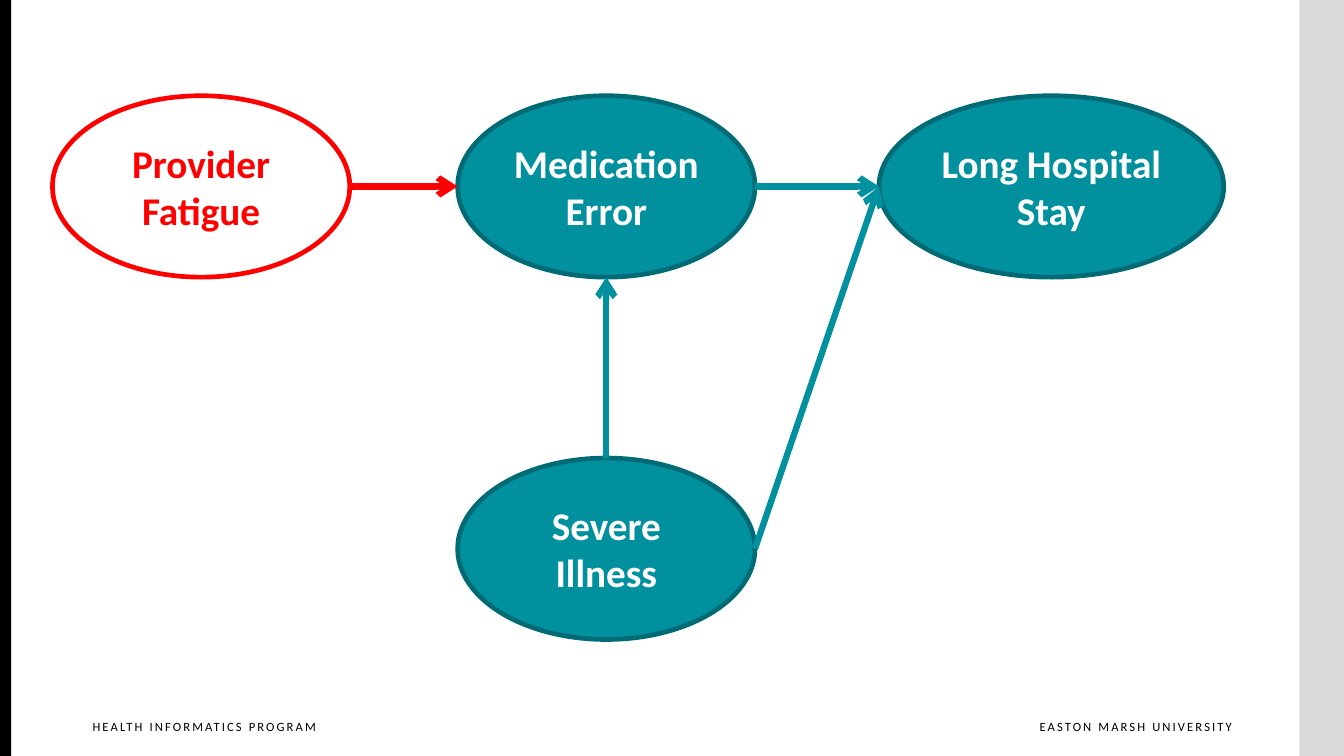
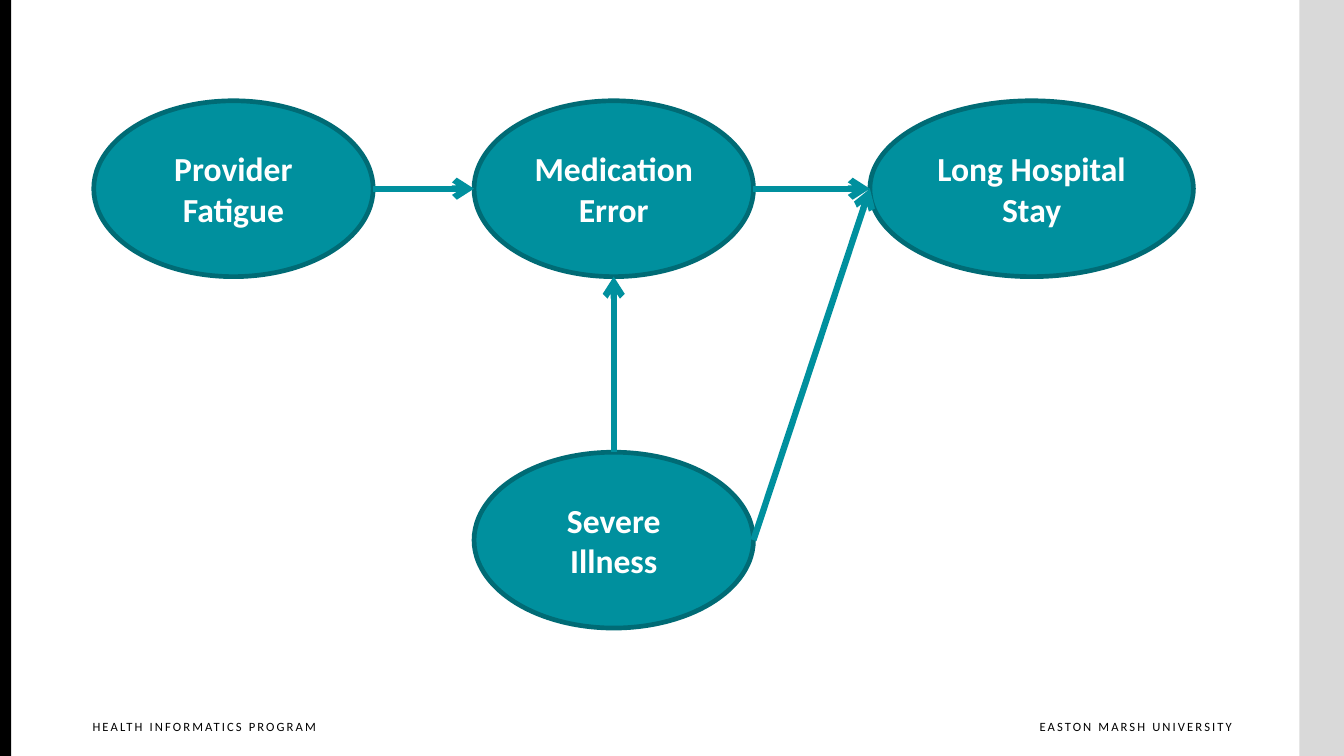
"""Build two causal diagrams of provider fatigue and hospital stay."""
from lxml import etree
from pptx import Presentation
from pptx import util as u
from pptx.dml.color import RGBColor
from pptx.enum import shapes, text
from pptx.oxml.ns import qn

FONT = "Calibri"
WIDTH, HEIGHT = 960, 540
TEAL, DARK_TEAL, RED, WHITE, BLACK, GREY = (
    "00909E", "006B75", "FF0000", "FFFFFF", "000000", "D9D9D9")

BANDS = [(928.08, 31.92, GREY), (0, 7.92, BLACK)]
FOOTERS = [
    ("EASTON MARSH UNIVERSITY", 710.64, 169.2, text.PP_ALIGN.RIGHT),
    ("HEALTH INFORMATICS PROGRAM", 59.04, 182.88, text.PP_ALIGN.LEFT),
]
FOOTER_TOP, FOOTER_HEIGHT = 509.76, 23.76

NODES = [
    ("Medication Error", 1, 0),
    ("Long Hospital Stay", 2, 0),
    ("Severe Illness", 1, 1),
    ("Provider Fatigue", 0, 0),
]
ARROWS = [
    ("Medication Error", "right", "Long Hospital Stay", "left"),
    ("Severe Illness", "right", "Long Hospital Stay", "left"),
    ("Severe Illness", "top", "Medication Error", "bottom"),
    ("Provider Fatigue", "right", "Medication Error", "left"),
]
SIDES = {"left": (0, 0.5), "right": (1, 0.5), "top": (0.5, 0), "bottom": (0.5, 1)}
DIAGRAMS = [
    {"columns": [(37.44, 212.4), (326.88, 212.4), (627.84, 246.24)],
     "rows": [68.4, 327.2], "height": 129.6, "size": 28,
     "highlight": "Provider Fatigue"},
    {"columns": [(66.96, 199.6), (338.6, 199.6), (621.36, 231.12)],
     "rows": [72, 323], "height": 125.6, "size": 24, "highlight": None},
]


def color(value):
    return RGBColor.from_string(value)


def add_filled(slide, kind, box, fill):
    shape = slide.shapes.add_shape(kind, *map(u.Pt, box))
    shape.shadow.inherit = False
    shape.fill.solid()
    shape.fill.fore_color.rgb = color(fill)
    shape.line.fill.background()
    return shape


def write(frame, words, size, ink, align, bold=False):
    frame.word_wrap = True
    paragraph = frame.paragraphs[0]
    paragraph.alignment = align
    run = paragraph.add_run()
    run.text = words
    run.font.name = FONT
    run.font.size = u.Pt(size)
    run.font.bold = bold
    run.font.color.rgb = color(ink)
    return run


def add_frame(slide):
    for left, width, fill in BANDS:
        add_filled(slide, shapes.MSO_SHAPE.RECTANGLE, (left, 0, width, HEIGHT), fill)
    for words, left, width, align in FOOTERS:
        box = slide.shapes.add_textbox(
            *map(u.Pt, (left, FOOTER_TOP, width, FOOTER_HEIGHT)))
        box.text_frame.margin_right = 0
        run = write(box.text_frame, words, 9, BLACK, align)
        run.font._element.set("spc", "150")


def add_node(slide, words, box, size, highlighted):
    fill, outline, ink = (WHITE, RED, RED) if highlighted else (TEAL, DARK_TEAL, WHITE)
    oval = add_filled(slide, shapes.MSO_SHAPE.OVAL, box, fill)
    oval.line.color.rgb = color(outline)
    oval.line.width = u.Pt(3.35)
    oval.text_frame.vertical_anchor = text.MSO_ANCHOR.MIDDLE
    write(oval.text_frame, words, size, ink, text.PP_ALIGN.CENTER, bold=True)


def side_point(box, side):
    left, top, width, height = box
    across, down = SIDES[side]
    return left + across * width, top + down * height


def add_arrow(slide, start, end, ink):
    arrow = slide.shapes.add_connector(
        shapes.MSO_CONNECTOR.STRAIGHT, *map(u.Pt, start + end))
    arrow.line.color.rgb = color(ink)
    arrow.line.width = u.Pt(4.5)
    properties = arrow._element.spPr
    etree.SubElement(properties.find(qn("a:ln")), qn("a:tailEnd"), type="arrow")
    etree.SubElement(properties, qn("a:effectLst"))


def add_diagram(slide, diagram):
    highlight = diagram["highlight"]
    boxes = {}
    for words, column, row in NODES:
        left, width = diagram["columns"][column]
        boxes[words] = (left, diagram["rows"][row], width, diagram["height"])
        add_node(slide, words, boxes[words], diagram["size"], words == highlight)
    for source, source_side, target, target_side in ARROWS:
        add_arrow(slide, side_point(boxes[source], source_side),
                  side_point(boxes[target], target_side),
                  RED if source == highlight else TEAL)


def main():
    presentation = Presentation()
    presentation.slide_width, presentation.slide_height = u.Pt(WIDTH), u.Pt(HEIGHT)
    blank = presentation.slide_layouts[6]
    for diagram in DIAGRAMS:
        slide = presentation.slides.add_slide(blank)
        add_frame(slide)
        add_diagram(slide, diagram)
    presentation.save("out.pptx")


if __name__ == "__main__":
    main()
